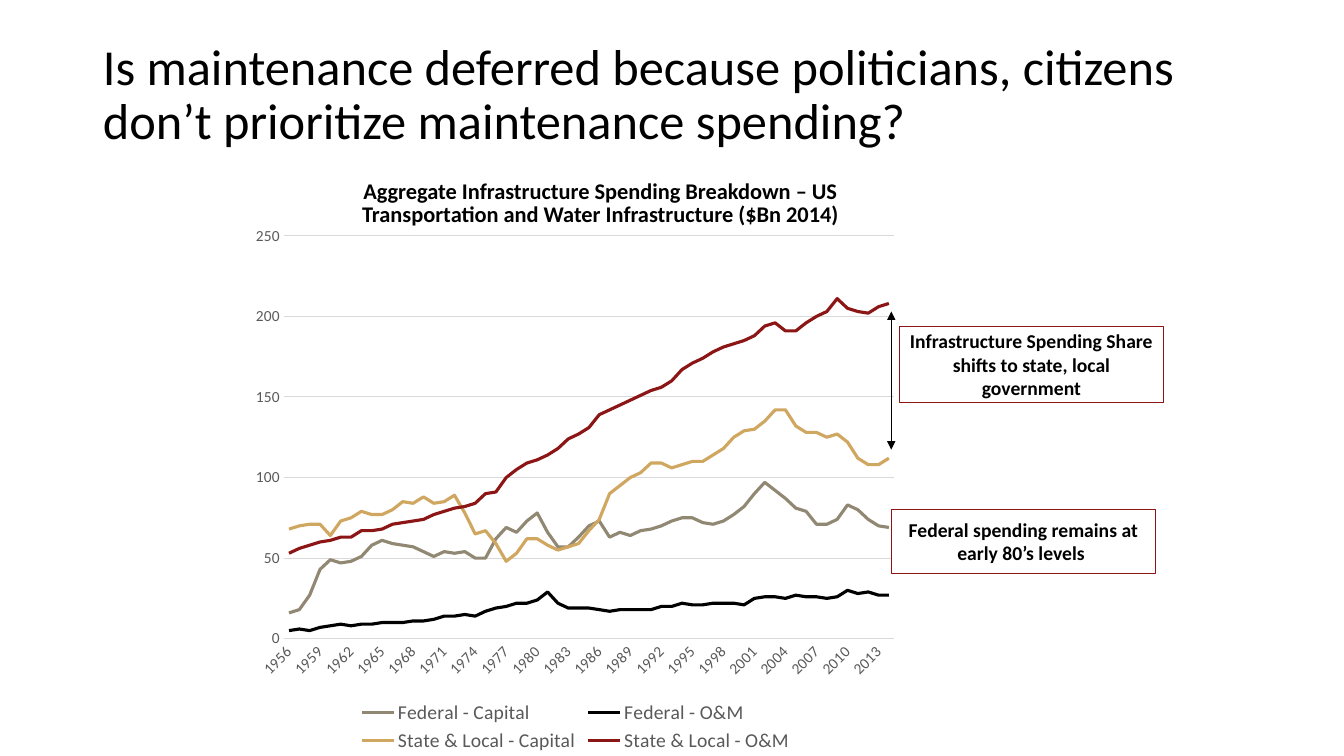
from pptx import Presentation
from pptx.chart.data import CategoryChartData as ChartData
from pptx.dml.color import RGBColor as RGB
from pptx.enum.chart import XL_CHART_TYPE as Kind, XL_LEGEND_POSITION as Spot, XL_TICK_MARK as Tick
from pptx.enum.shapes import MSO_CONNECTOR as Link, MSO_SHAPE as Form
from pptx.enum.text import MSO_ANCHOR as Anchor, MSO_AUTO_SIZE as Fit, PP_ALIGN as Align
from pptx.oxml.ns import qn
from pptx.oxml.xmlchemy import OxmlElement as Node
from pptx.util import Pt

# Content
FONT = "Calibri"
BLACK, WHITE = RGB(0, 0, 0), RGB(0xFF, 0xFF, 0xFF)
GRAY, GRID = RGB(0x59, 0x59, 0x59), RGB(0xD9, 0xD9, 0xD9)
STONE, GOLD, RED = RGB(0x91, 0x88, 0x73), RGB(0xD0, 0xA7, 0x60), RGB(0x8C, 0x15, 0x15)

TITLE = "Is maintenance deferred because politicians, citizens don’t prioritize maintenance spending?"
HEAD = "Aggregate Infrastructure Spending Breakdown – US Transportation and Water Infrastructure ($Bn 2014)"
NOTES = [
    ("Federal spending remains at early 80’s levels ", (884, 505, 262, 64)),
    ("Infrastructure Spending Share shifts to state, local government", (892, 324, 262, 75)),
]
YEARS = range(1956, 2015)
SERIES = [
    ("Federal - Capital", STONE, [
        16, 18, 27, 43, 49, 47, 48, 51, 58, 61, 59, 58, 57, 54, 51, 54, 53, 54, 50, 50,
        62, 69, 66, 73, 78, 66, 57, 57, 63, 70, 73, 63, 66, 64, 67, 68, 70, 73, 75, 75,
        72, 71, 73, 77, 82, 90, 97, 92, 87, 81, 79, 71, 71, 74, 83, 80, 74, 70, 69]),
    ("Federal - O&M", BLACK, [
        5, 6, 5, 7, 8, 9, 8, 9, 9, 10, 10, 10, 11, 11, 12, 14, 14, 15, 14, 17,
        19, 20, 22, 22, 24, 29, 22, 19, 19, 19, 18, 17, 18, 18, 18, 18, 20, 20, 22, 21,
        21, 22, 22, 22, 21, 25, 26, 26, 25, 27, 26, 26, 25, 26, 30, 28, 29, 27, 27]),
    ("State & Local - Capital", GOLD, [
        68, 70, 71, 71, 64, 73, 75, 79, 77, 77, 80, 85, 84, 88, 84, 85, 89, 78, 65, 67,
        59, 48, 53, 62, 62, 58, 55, 57, 59, 67, 74, 90, 95, 100, 103, 109, 109, 106, 108, 110,
        110, 114, 118, 125, 129, 130, 135, 142, 142, 132, 128, 128, 125, 127, 122, 112, 108, 108, 112]),
    ("State & Local - O&M", RED, [
        53, 56, 58, 60, 61, 63, 63, 67, 67, 68, 71, 72, 73, 74, 77, 79, 81, 82, 84, 90,
        91, 100, 105, 109, 111, 114, 118, 124, 127, 131, 139, 142, 145, 148, 151, 154, 156, 160, 167, 171,
        174, 178, 181, 183, 185, 188, 194, 196, 191, 191, 196, 200, 203, 211, 205, 203, 202, 206, 208]),
]
PLOT = {"x": 0.06, "y": 0.03, "w": 0.92, "h": 0.75}

# 100 px to the inch
PX = 9144


def emu(*sizes):
    return [size * PX for size in sizes]


def style(font, size, color, bold=False):
    font.name, font.size, font.bold = FONT, Pt(size), bold
    font.color.rgb = color


def write(shape, text, size, align, anchor, bold=False, space=None):
    frame = shape.text_frame
    frame.word_wrap, frame.auto_size = True, Fit.NONE
    frame.vertical_anchor = anchor
    para = frame.paragraphs[0]
    para.alignment, para.line_spacing = align, space
    run = para.add_run()
    run.text = text
    style(run.font, size, BLACK, bold)
    return frame


def node(tag, **attrs):
    item = Node(tag)
    for key, val in attrs.items():
        item.set(key, str(val))
    return item


deck = Presentation()
deck.slide_width, deck.slide_height = emu(1333, 750)
slide = deck.slides.add_slide(deck.slide_layouts[5])
shapes = slide.shapes

# Title
title = shapes.title
title.left, title.top, title.width, title.height = emu(92, 23, 1150, 145)
write(title, TITLE, 36, Align.LEFT, Anchor.MIDDLE, space=0.9)

# Chart
data = ChartData(number_format="#,##0")
data.categories = [str(year) for year in YEARS]
for name, _, vals in SERIES:
    data.add_series(name, vals)
chart = shapes.add_chart(Kind.LINE, *emu(242, 218, 658, 533), data).chart
chart.has_title = False
style(chart.font, 10, BLACK)
chart.has_legend = True
chart.legend.position = Spot.BOTTOM
chart.legend.include_in_layout = False
style(chart.legend.font, 14, GRAY)
chart.plots[0].vary_by_categories = False
for line, (_, color, _) in zip(chart.plots[0].series, SERIES):
    line.smooth = False
    line.format.line.color.rgb = color
    line.format.line.width = Pt(2.25)

# Axes
cat, val = chart.category_axis, chart.value_axis
for axis in (cat, val):
    axis.major_tick_mark = axis.minor_tick_mark = Tick.NONE
    style(axis.tick_labels.font, 11, GRAY)
val.minimum_scale, val.maximum_scale, val.major_unit = 0, 250, 50
val.tick_labels.number_format = "#,##0"
val.tick_labels.number_format_is_linked = False
val.format.line.fill.background()
val.has_major_gridlines = True
for rule in (cat.format.line, val.major_gridlines.format.line):
    rule.color.rgb = GRID
    rule.width = Pt(0.75)

# Slanted label for every third year, points between ticks
tree = cat._element
tree.find(qn("c:txPr")).find(qn("a:bodyPr")).set("rot", "-2700000")
tree.find(qn("c:noMultiLvlLbl")).addprevious(node("c:tickLblSkip", val=3))
if val._element.find(qn("c:crossBetween")) is None:
    val._element.find(qn("c:crosses")).addnext(node("c:crossBetween", val="between"))

# Fixed plot area
area = tree.getparent()
old = area.find(qn("c:layout"))
if old is not None:
    area.remove(old)
layout, manual = node("c:layout"), node("c:manualLayout")
layout.append(manual)
manual.append(node("c:layoutTarget", val="inner"))
for key in "xy":
    manual.append(node(f"c:{key}Mode", val="edge"))
for key, part in PLOT.items():
    manual.append(node(f"c:{key}", val=part))
area.insert(0, layout)

# Chart heading
head = shapes.add_textbox(*emu(309, 194, 583, 36))
write(head, HEAD, 16, Align.CENTER, Anchor.BOTTOM, True, 0.85).margin_left = 0

# Notes
for text, place in NOTES:
    box = shapes.add_shape(Form.RECTANGLE, *emu(*place))
    box.shadow.inherit = False
    box.fill.solid()
    box.fill.fore_color.rgb = WHITE
    box.line.color.rgb = RED
    box.line.width = Pt(0.5)
    write(box, text, 14, Align.CENTER, Anchor.MIDDLE, True)

# Double arrow for the gap
arrow = shapes.add_connector(Link.STRAIGHT, *emu(884, 309, 884, 446))
arrow.line.color.rgb = BLACK
arrow.line.width = Pt(1)
for end in ("a:headEnd", "a:tailEnd"):
    arrow.line._get_or_add_ln().append(node(end, type="triangle"))
arrow._element.spPr.append(node("a:effectLst"))

deck.save("out.pptx")
